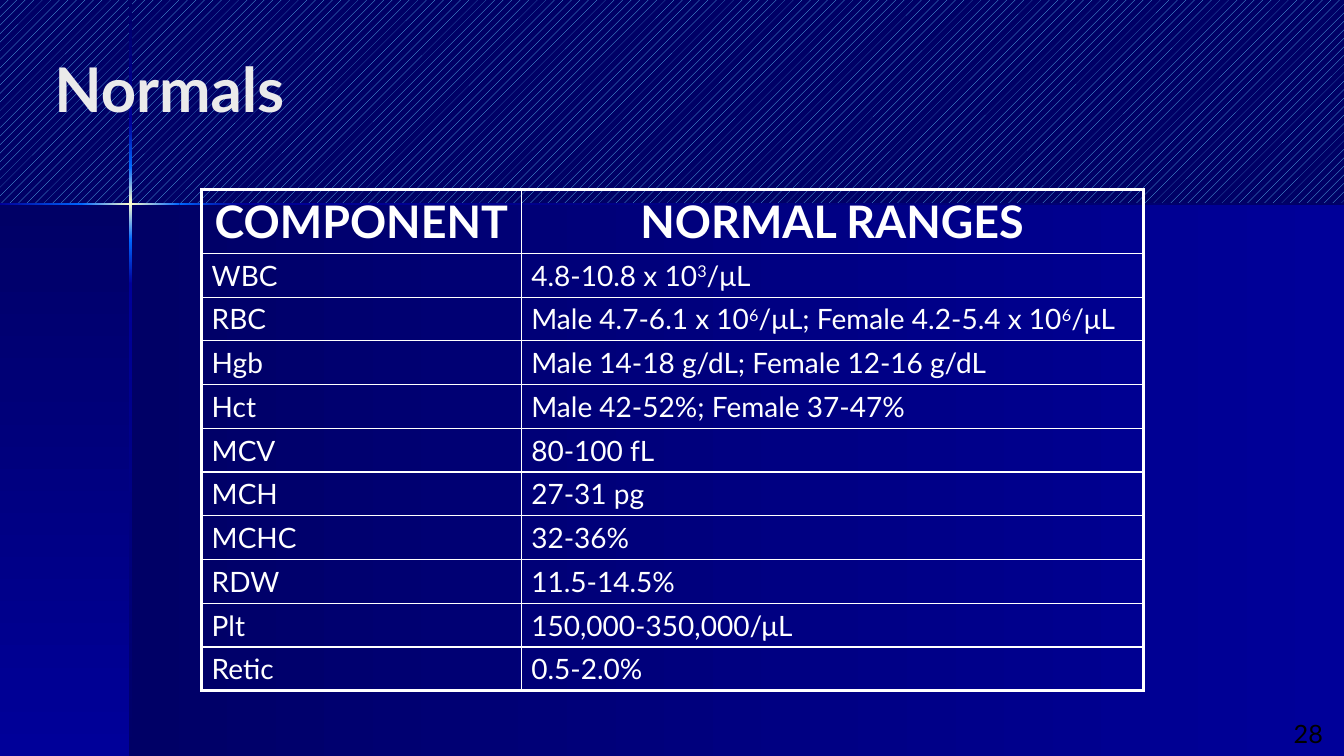
"""Build the slide of normal blood count ranges."""
from itertools import pairwise

from lxml import etree
from pptx import Presentation
from pptx.dml.color import RGBColor
from pptx.enum.dml import MSO_PATTERN
from pptx.enum.shapes import MSO_SHAPE
from pptx.enum.text import MSO_ANCHOR, PP_ALIGN
from pptx.oxml.ns import qn
from pptx.util import Inches, Pt

RECT = MSO_SHAPE.RECTANGLE
DOTS = MSO_PATTERN.PERCENT_20
TOP, MIDDLE = MSO_ANCHOR.TOP, MSO_ANCHOR.MIDDLE
LEFT, CENTER, RIGHT = PP_ALIGN.LEFT, PP_ALIGN.CENTER, PP_ALIGN.RIGHT

TITLE, PAGE = "Normals", "28"
ROWS = [
    ("COMPONENT", "NORMAL RANGES"),
    ("WBC", "4.8-10.8 x 10^3^/μL"),
    ("RBC", "Male 4.7-6.1 x 10^6^/μL; Female 4.2-5.4 x 10^6^/μL"),
    ("Hgb", "Male 14-18 g/dL; Female 12-16 g/dL"),
    ("Hct", "Male 42-52%; Female 37-47%"),
    ("MCV", "80-100 fL"),
    ("MCH", "27-31 pg"),
    ("MCHC", "32-36%"),
    ("RDW", "11.5-14.5%"),
    ("Plt", "150,000-350,000/μL"),
    ("Retic", "0.5-2.0%"),
]
THEME = dict(font="Lato", navy="000066", blue="000099", ray="0066FF", glow="FFFFCC",
             dots="66CCFF", title="EAEAEA", text="FFFFFF", page="000000",
             title_pt=44, head_pt=32, body_pt=20, page_pt=18,
             frame_pt=2.25, rule_pt=1)

W, H = 13.33, 7.5
CROSS_X, CROSS_Y = 1.29, 2.02
RAY_X = [0, 0.81, 1.78, 2.36, W]
RAY_Y = [0.01, 1.21, 1.65, 2.38, 2.82, H]
RAY_COLORS = [("navy", "blue"), ("blue", "ray"), ("ray", "glow", "ray"),
              ("ray", "blue"), ("blue", "navy")]
TABLE_X, TABLE_Y = 2, 1.88
COLS = [3.17, 6.17]
HEAD_H, ROW_H = 0.63, 0.43


def rgb(name):
    return RGBColor.from_string(THEME[name])


def gradient_box(s, x, y, w, h, colors, angle):
    sp = s.shapes.add_shape(RECT, Inches(x), Inches(y), Inches(w), Inches(h))
    sp.shadow.inherit = False
    sp.line.fill.background()
    sp.fill.gradient()
    sp.fill.gradient_angle = -angle % 360
    stops = sp._element.spPr.find(qn("a:gradFill")).find(qn("a:gsLst"))
    for stop in list(stops):
        stops.remove(stop)
    for i, name in enumerate(colors):
        pos = str(100000 * i // (len(colors) - 1))
        stop = etree.SubElement(stops, qn("a:gs"), pos=pos)
        etree.SubElement(stop, qn("a:srgbClr"), val=THEME[name])


def write(tf, text, size, color, bold=False, align=LEFT):
    p = tf.paragraphs[0]
    p.alignment = align
    for i, piece in enumerate(text.split("^")):
        r = p.add_run()
        r.text = piece
        r.font.name, r.font.size, r.font.bold = THEME["font"], Pt(THEME[size]), bold
        r.font.color.rgb = rgb(color)
        if i % 2:
            r._r.get_or_add_rPr().set("baseline", "30000")


def text_box(s, x, y, w, h, anchor, *args):
    tf = s.shapes.add_textbox(Inches(x), Inches(y), Inches(w), Inches(h)).text_frame
    tf.word_wrap = True
    tf.vertical_anchor = anchor
    write(tf, *args)


def border(cell, outer):
    tcPr = cell._tc.get_or_add_tcPr()
    for i, (side, is_outer) in enumerate(outer.items()):
        width = Pt(THEME["frame_pt" if is_outer else "rule_pt"])
        ln = etree.Element(qn(f"a:ln{side}"), w=str(width))
        fill = etree.SubElement(ln, qn("a:solidFill"))
        etree.SubElement(fill, qn("a:srgbClr"), val=THEME["text"])
        tcPr.insert(i, ln)


def backdrop(s):
    fill = s.background.fill
    fill.patterned()
    fill.pattern = DOTS
    fill.fore_color.rgb, fill.back_color.rgb = rgb("dots"), rgb("navy")
    panel = ("navy", "blue")
    gradient_box(s, CROSS_X, CROSS_Y, W - CROSS_X, H - CROSS_Y, panel, 0)
    gradient_box(s, 0, CROSS_Y, CROSS_X, H - CROSS_Y, panel, 90)
    for (a, b), colors in zip(pairwise(RAY_Y), RAY_COLORS):
        gradient_box(s, CROSS_X - 0.01, a, 0.03, b - a, colors, 90)
    for (a, b), colors in zip(pairwise(RAY_X), RAY_COLORS[1:]):
        gradient_box(s, a, CROSS_Y - 0.01, b - a, 0.02, colors, 0)


def range_table(s):
    heights = [HEAD_H] + [ROW_H] * (len(ROWS) - 1)
    table = s.shapes.add_table(len(ROWS), len(COLS), Inches(TABLE_X), Inches(TABLE_Y),
                               Inches(sum(COLS)), Inches(sum(heights))).table
    table.first_row = table.horz_banding = False
    for col, width in zip(table.columns, COLS):
        col.width = Inches(width)
    for i, (row, height) in enumerate(zip(ROWS, heights)):
        table.rows[i].height = Inches(height)
        head = i == 0
        for j, text in enumerate(row):
            cell = table.cell(i, j)
            cell.fill.background()
            border(cell, dict(L=j == 0, R=j == len(COLS) - 1,
                              T=head, B=i == len(ROWS) - 1))
            write(cell.text_frame, text, "head_pt" if head else "body_pt", "text",
                  head, CENTER if head else LEFT)


def main():
    prs = Presentation()
    prs.slide_width, prs.slide_height = Inches(W), Inches(H)
    s = prs.slides.add_slide(prs.slide_layouts[6])
    backdrop(s)
    text_box(s, 0.44, 0.25, 12.45, 1.25, MIDDLE, TITLE, "title_pt", "title", True)
    range_table(s)
    text_box(s, 12.22, 7.08, 1, 0.5, TOP, PAGE, "page_pt", "page", False, RIGHT)
    prs.save("out.pptx")


if __name__ == "__main__":
    main()
